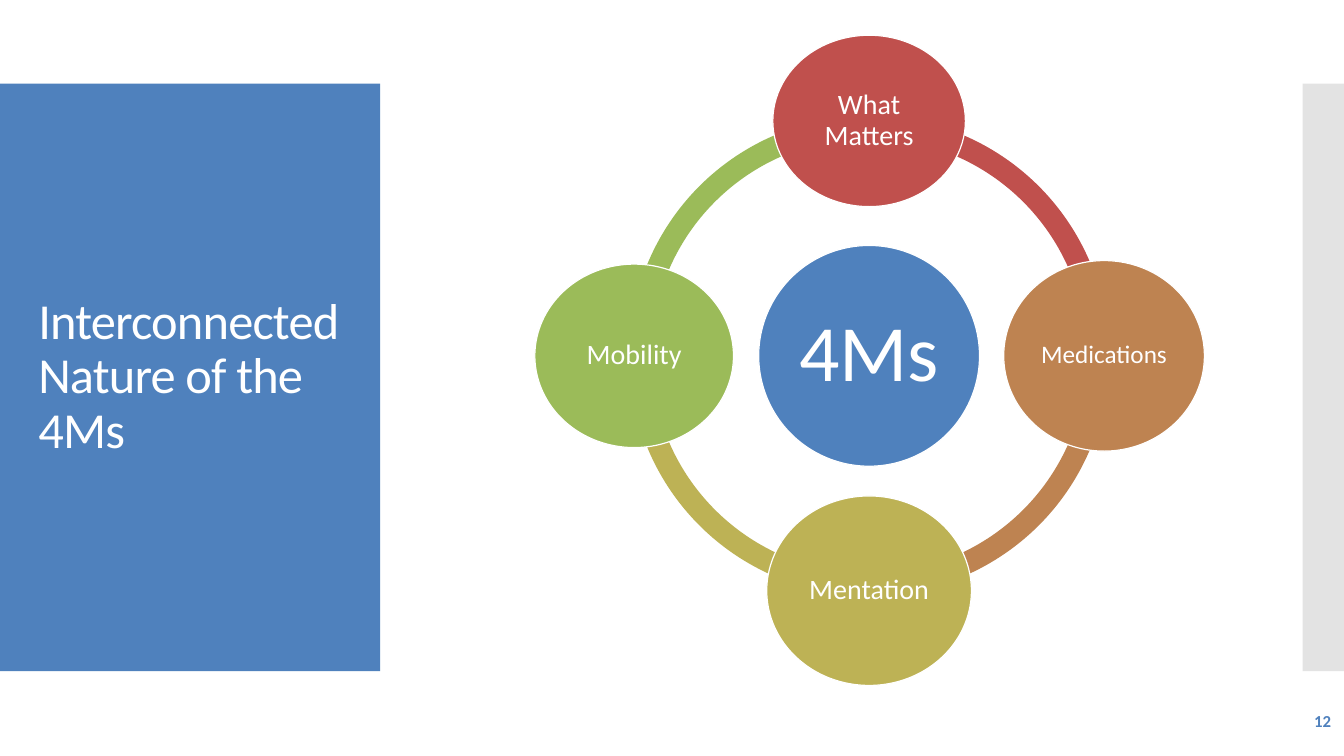
import math

import lxml.etree
import pptx
import pptx.dml.color
import pptx.enum.shapes
import pptx.enum.text
import pptx.oxml.ns
import pptx.util

Inches, Pt = pptx.util.Inches, pptx.util.Pt
RGB = pptx.dml.color.RGBColor.from_string
SHAPE = pptx.enum.shapes.MSO_SHAPE
ALIGN = pptx.enum.text.PP_ALIGN
MIDDLE = pptx.enum.text.MSO_ANCHOR.MIDDLE

COLORS = {
    "blue": "4F81BD", "red": "C0504D", "orange": "BE8351",
    "olive": "BDB255", "green": "9BBB59", "gray": "C8C8C8", "white": "FFFFFF",
}


def add_filled(kind, left, top, width, height, color, outlined=False):
    sp = s.shapes.add_shape(kind, Inches(left), Inches(top), Inches(width), Inches(height))
    sp.shadow.inherit = False
    sp.fill.solid()
    sp.fill.fore_color.rgb = RGB(COLORS[color])
    if outlined:
        sp.line.color.rgb = RGB(COLORS["white"])
        sp.line.width = Pt(0.85)
    else:
        sp.line.fill.background()
    return sp


def write_text(sp, text, size, color, align, inset=None, spacing=0.9):
    """Fill the shape with one vertically centred paragraph and return its run."""
    tf = sp.text_frame
    tf.word_wrap = True
    tf.vertical_anchor = MIDDLE
    if inset is not None:
        tf.margin_left = tf.margin_right = tf.margin_top = tf.margin_bottom = Inches(inset)
    p = tf.paragraphs[0]
    p.alignment = align
    p.line_spacing = spacing
    r = p.add_run()
    r.text = text
    r.font.name = "Calibri"
    r.font.size = Pt(size)
    r.font.color.rgb = RGB(COLORS[color])
    return r


prs = pptx.Presentation()
prs.slide_width, prs.slide_height = Inches(13.33), Inches(7.5)
s = prs.slides.add_slide(prs.slide_layouts[5])

# Side panels
add_filled(SHAPE.RECTANGLE, 0, 0.83, 3.77, 5.83, "blue")
strip = add_filled(SHAPE.RECTANGLE, 12.92, 0.83, 0.41, 5.83, "gray")
strip_color = strip.element.spPr.find(".//" + pptx.oxml.ns.qn("a:srgbClr"))
lxml.etree.SubElement(strip_color, pptx.oxml.ns.qn("a:alpha"), val="50000")

# Title, brought in front of the blue panel
title = s.shapes.title
title.left, title.top = Inches(0.28), Inches(1.23)
title.width, title.height = Inches(3.3), Inches(5.03)
title.element.getparent().append(title.element)
r = write_text(title, "Interconnected Nature of the 4Ms", 36, "white", ALIGN.LEFT)
r.font._element.set("spc", "-60")

# Slide number
number = s.shapes.add_textbox(Inches(11.63), Inches(6.95), Inches(1.67), Inches(0.4))
write_text(number, "12", 12, "blue", ALIGN.RIGHT, spacing=1).font.bold = True

# Cycle: clockwise from the top
CENTER_X, CENTER_Y = 8.62, 3.53
ORBIT, RING, HUB = 2.33, 4.76, 2.19
QUARTER = 54  # 90 degrees in adjustment units
nodes = [
    ("What Matters", "red", 1.91, 1.7, 20),
    ("Medications", "orange", 1.99, 1.89, 18),
    ("Mentation", "olive", 2.03, 1.88, 20),
    ("Mobility", "green", 1.97, 1.82, 20),
]

for i, (_, color, *_) in reversed(list(enumerate(nodes))):
    arc = add_filled(SHAPE.BLOCK_ARC, CENTER_X - RING / 2, CENTER_Y - RING / 2, RING, RING, color)
    arc.adjustments[0] = (i + 3) % 4 * QUARTER
    arc.adjustments[1] = i * QUARTER
    arc.adjustments[2] = 0.046

hub = add_filled(SHAPE.OVAL, CENTER_X - HUB / 2, CENTER_Y - HUB / 2, HUB, HUB, "blue", True)
write_text(hub, "4Ms", 57, "white", ALIGN.CENTER, 0.08)

for i, (label, color, width, height, size) in enumerate(nodes):
    angle = math.radians(90 * i - 90)
    x = CENTER_X + ORBIT * math.cos(angle)
    y = CENTER_Y + ORBIT * math.sin(angle)
    node = add_filled(SHAPE.OVAL, x - width / 2, y - height / 2, width, height, color, True)
    write_text(node, label, size, "white", ALIGN.CENTER, 0.03)

prs.save("out.pptx")
